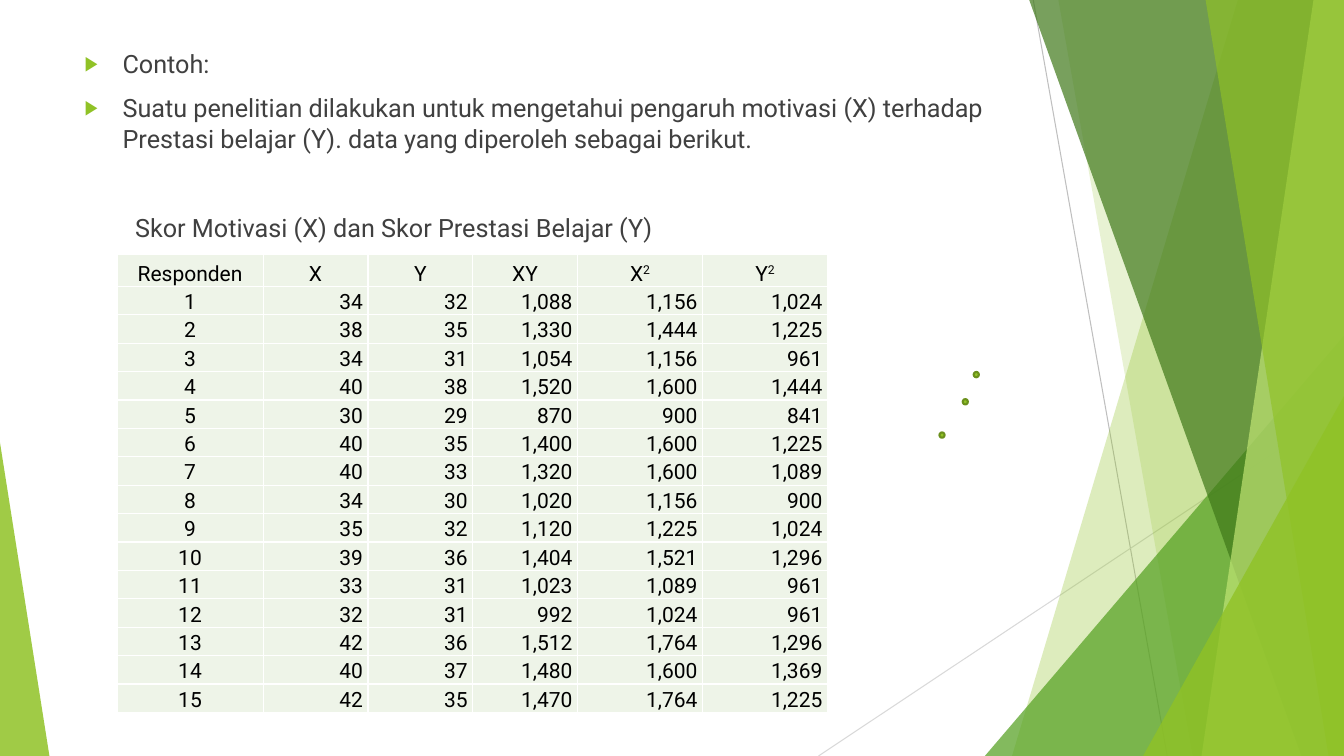
from lxml import etree
from pptx import Presentation, util as u
from pptx.dml.color import RGBColor
from pptx.enum import shapes, text
from pptx.oxml.ns import qn

COLORS = {
    "leaf": "90C226", "grass": "54A021", "forest": "3F7819", "lime": "C0E474",
    "dot edge": "6B901C", "ray": "BFBFBF", "pale ray": "D9D9D9",
    "body": "404040", "figure": "000000", "cell": "EEF4E8", "border": "FFFFFF",
}
FONT = "Roboto"

deck = Presentation()
deck.slide_width, deck.slide_height = u.Inches(13.33), u.Inches(7.5)
# All lengths are percentages of the slide: one col is 1% of its width, one row 1% of its height.
COL, ROW = deck.slide_width / 100, deck.slide_height / 100
slide = deck.slides.add_slide(deck.slide_layouts[1])
title = slide.shapes.title._element
title.getparent().remove(title)


def write(paragraph, content, size=18, color="body", align=None, raised=False):
    """Append one formatted run; raised makes it a superscript."""
    run = paragraph.add_run()
    run.text = content
    run.font.name, run.font.size = FONT, u.Pt(size)
    run.font.color.rgb = RGBColor.from_string(COLORS[color])
    if raised:
        run.font._element.set("baseline", "30000")
    if align is not None:
        paragraph.alignment = align


def paint(shape, color, opacity=100):
    """Fill a shape flat, without outline or shadow."""
    shape.shadow.inherit = False
    shape.line.fill.background()
    shape.fill.solid()
    shape.fill.fore_color.rgb = RGBColor.from_string(COLORS[color])
    if opacity < 100:
        tint = shape.fill._xPr.find(".//" + qn("a:srgbClr"))
        etree.SubElement(tint, qn("a:alpha"), val=str(opacity * 1000))


# Thin rays behind the facets
for x1, y1, x2, y2, color in [(76.88, 0, 86.85, 100, "ray"), (100, 53.73, 60.9, 100, "pale ray")]:
    ray = slide.shapes.add_connector(shapes.MSO_CONNECTOR.STRAIGHT, int(x1 * COL), int(y1 * ROW),
                                     int(x2 * COL), int(y2 * ROW))
    ray.line.color.rgb = RGBColor.from_string(COLORS[color])
    ray.line.width = u.Pt(0.75)
    etree.SubElement(ray._element.spPr, qn("a:effectLst"))

# Facets fill from a slanted left edge to the right side of the slide.
# Slanted: top x, bottom x. Corner: left, top, width, apex share.
FACETS = [
    ("slanted", (92.1, 75.3), "leaf", 30),
    ("slanted", (78.75, 88.73), "leaf", 20),
    ("corner", (73.28, 44.4, 26.72, 1), "grass", 72),
    ("slanted", (76.58, 96.83), "forest", 70),
    ("slanted", (97.73, 89.4), "lime", 70),
    ("slanted", (89.7, 98.85), "leaf", 65),
    ("corner", (85.05, 52.4, 14.95, 1), "leaf", 80),
    ("corner", (0, 58.53, 3.68, 0), "leaf", 85),
]
for kind, place, color, opacity in FACETS:
    if kind == "slanted":
        top_x, bottom_x = (int(x * COL) for x in place)
        outline = slide.shapes.build_freeform(top_x, 0)
        outline.add_line_segments([(deck.slide_width, 0), (deck.slide_width, deck.slide_height),
                                   (bottom_x, deck.slide_height)])
        facet = outline.convert_to_shape()
    else:
        left, top, width, apex = place
        facet = slide.shapes.add_shape(shapes.MSO_SHAPE.ISOSCELES_TRIANGLE, int(left * COL),
                                       int(top * ROW), int(width * COL), int((100 - top) * ROW))
        facet.adjustments[0] = apex
    paint(facet, color, opacity)

# Introduction and table caption
intro = slide.placeholders[1]
intro.left, intro.top = int(5.55 * COL), int(5.73 * ROW)
intro.width, intro.height = int(70.5 * COL), int(82.4 * ROW)
intro.text_frame.auto_size = text.MSO_AUTO_SIZE.NONE
INTRO = [
    ("Contoh:", True, 10),
    ("Suatu penelitian dilakukan untuk mengetahui pengaruh motivasi (X) terhadap "
     "Prestasi belajar (Y). data yang diperoleh sebagai berikut.", True, 10),
    ("Skor Motivasi (X) dan Skor Prestasi Belajar (Y)", False, 42),
]
for i, (sentence, bulleted, gap) in enumerate(INTRO):
    line = intro.text_frame.add_paragraph() if i else intro.text_frame.paragraphs[0]
    line.space_before = u.Pt(gap)
    write(line, sentence)
    props = line._p.get_or_add_pPr()
    indent = int(2.82 * COL)
    props.set("marL", str(indent if bulleted else int(3.75 * COL)))
    props.set("indent", str(-indent if bulleted else 0))
    if bulleted:
        tint = etree.SubElement(props, qn("a:buClr"))
        etree.SubElement(tint, qn("a:srgbClr"), val=COLORS["leaf"])
        etree.SubElement(props, qn("a:buSzPct"), val="80000")
        etree.SubElement(props, qn("a:buChar"), char="▶")
    else:
        etree.SubElement(props, qn("a:buNone"))

# Scores: the products and squares follow from X and Y
MOTIVATION = [34, 38, 34, 40, 30, 40, 40, 34, 35, 39, 33, 32, 42, 40, 42]
ACHIEVEMENT = [32, 35, 31, 38, 29, 35, 33, 30, 32, 36, 31, 31, 36, 37, 35]
records = [["Responden", "X", "Y", "XY", "X²", "Y²"]]
for number, (x, y) in enumerate(zip(MOTIVATION, ACHIEVEMENT), 1):
    records.append([f"{value:,}" for value in (number, x, y, x * y, x * x, y * y)])

WIDTHS = [10.88, 7.8, 7.8, 7.8, 9.3, 9.3]
HEIGHTS = [4.27] + [3.74] * len(MOTIVATION)
scores = slide.shapes.add_table(len(records), len(WIDTHS), int(8.7 * COL), int(33.6 * ROW),
                                int(sum(WIDTHS) * COL), int(sum(HEIGHTS) * ROW)).table
for column, width in zip(scores.columns, WIDTHS):
    column.width = int(width * COL)
for r, record in enumerate(records):
    scores.rows[r].height = int(HEIGHTS[r] * ROW)
    for c, value in enumerate(record):
        cell = scores.cell(r, c)
        cell.margin_left = cell.margin_right = u.Inches(0.05)
        cell.margin_top = cell.margin_bottom = 0
        cell.vertical_anchor = text.MSO_ANCHOR.BOTTOM
        for side in ("lnL", "lnR", "lnT", "lnB"):
            border = etree.SubElement(cell._tc.get_or_add_tcPr(), qn("a:" + side), w=str(u.Pt(1)))
            stroke = etree.SubElement(border, qn("a:solidFill"))
            etree.SubElement(stroke, qn("a:srgbClr"), val=COLORS["border"])
        cell.fill.solid()
        cell.fill.fore_color.rgb = RGBColor.from_string(COLORS["cell"])
        line = cell.text_frame.paragraphs[0]
        line.line_spacing = 1.15
        centred = r == 0 or c == 0
        align = text.PP_ALIGN.CENTER if centred else text.PP_ALIGN.RIGHT
        write(line, value.rstrip("²"), size=15, color="figure", align=align)
        if value.endswith("²"):
            write(line, "2", size=15, color="figure", raised=True)

# Small dots beside the table
for left, top in [(69.9, 57.2), (72.45, 49.2), (71.63, 52.8)]:
    dot = slide.shapes.add_shape(shapes.MSO_SHAPE.OVAL, int(left * COL), int(top * ROW),
                                 int(0.38 * COL), int(0.7 * ROW))
    paint(dot, "leaf")
    dot.line.color.rgb = RGBColor.from_string(COLORS["dot edge"])
    dot.line.width = u.Pt(1.5)

deck.save("out.pptx")
